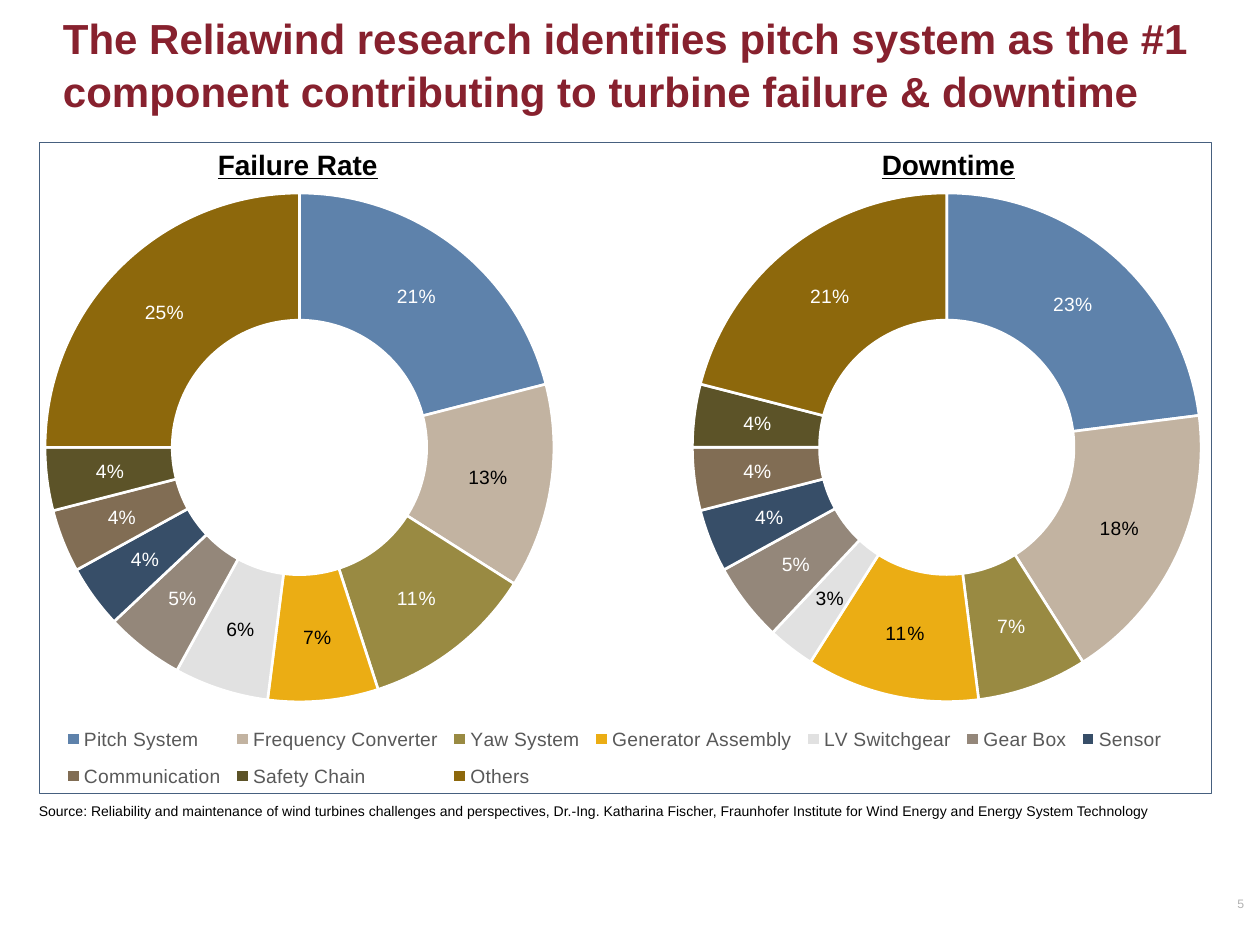
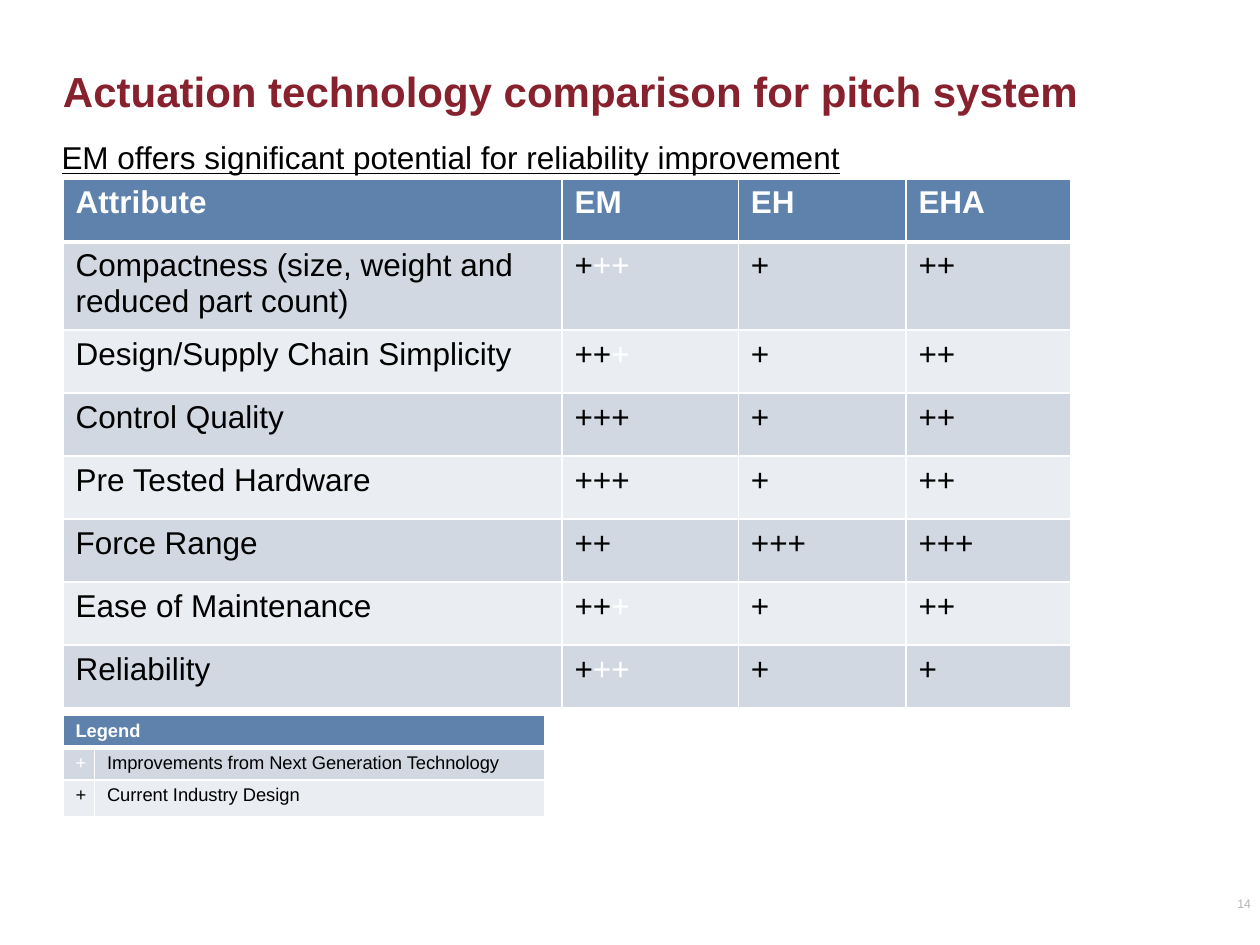
from lxml import etree
from pptx import Presentation
from pptx.chart import data
from pptx.dml.color import RGBColor
from pptx.enum import chart as kinds, shapes, text
from pptx.oxml import ns
from pptx.util import Inches, Pt

HUES = {"title": "87212E", "ink": "000000", "white": "FFFFFF", "page": "B2B2B2",
        "key": "595959", "frame": "46607F", "head": "5E82AB", "odd": "D2D8E2",
        "even": "EAEDF1"}
RGB = {name: RGBColor.from_string(code) for name, code in HUES.items()}
PARTS = {"Pitch System": "5E82AB", "Frequency Converter": "C2B3A1",
         "Yaw System": "998A42", "Generator Assembly": "EBAD14",
         "LV Switchgear": "E1E1E1", "Gear Box": "94877A", "Sensor": "374E68",
         "Communication": "816D54", "Safety Chain": "5C5328", "Others": "8D680C"}
PALE = (1, 3, 4)  # slices light enough to need black labels


def style(font, size, hue, **more):
    values = {"name": "Arial", "size": Pt(size), **more}
    for key, value in values.items():
        setattr(font, key, value)
    font.color.rgb = RGB[hue]


def write(slide, spot, words, size, hue, inset=True, wrap=True, **more):
    """Add a text box with one styled paragraph and return its frame."""
    frame = slide.shapes.add_textbox(*map(Inches, spot)).text_frame
    frame.word_wrap = wrap
    if not inset:
        for side in ("left", "right", "top", "bottom"):
            setattr(frame, f"margin_{side}", 0)
    run = frame.paragraphs[0].add_run()
    run.text = words
    style(run.font, size, hue, **more)
    return frame


deck = Presentation()
deck.slide_width, deck.slide_height = Inches(10), Inches(7.5)

# Titles and page numbers
heads = [
    ("The Reliawind research identifies pitch system as the #1 component "
     "contributing to turbine failure & downtime", (0.5, 0, 9.1, 1), "5"),
    ("Actuation technology comparison for pitch system", (0.5, 0.25, 9, 0.92), "14"),
]
pages = []
for title, spot, number in heads:
    page = deck.slides.add_slide(deck.slide_layouts[6])
    frame = write(page, spot, title, 24, "title", inset=False, bold=True)
    frame.vertical_anchor = text.MSO_ANCHOR.MIDDLE
    frame.paragraphs[0].line_spacing = 1.05
    write(page, (9.82, 7.11, 0.29, 0.12), number, 7, "page", inset=False)
    pages.append(page)
rates, compare = pages

# Slide 1: two rings that share one legend
rings = [
    ((-1.26, 1.45, 11.47, 5.4), (23, 18, 7, 11, 3, 5, 4, 4, 4, 21),
     {"plotArea": (0.589, 0.001, 0.352, 0.776), "legend": (0.15, 0.78, 0.77, 0.13)}),
    ((-0.91, 0.54, 8.45, 5.82), (21, 13, 11, 7, 6, 5, 4, 4, 4, 25),
     {"plotArea": (0.15, 0.112, 0.478, 0.811)}),
]
for spot, shares, areas in rings:
    feed = data.CategoryChartData()
    feed.categories = list(PARTS)
    feed.add_series("Series 1", shares)
    chart = rates.shapes.add_chart(
        kinds.XL_CHART_TYPE.DOUGHNUT, *map(Inches, spot), feed).chart
    style(chart.font, 10, "ink")
    chart.has_title = False
    chart.has_legend = "legend" in areas
    if chart.has_legend:
        chart.legend.position = kinds.XL_LEGEND_POSITION.BOTTOM
        chart.legend.include_in_layout = False
        style(chart.legend.font, 11, "key")

    plot = chart.plots[0]
    plot.vary_by_categories = True
    plot.has_data_labels = False
    ring = plot.series[0]
    labels = ring.data_labels
    labels.show_percentage, labels.show_value = True, False
    style(labels.font, 11, "white")
    for i, code in enumerate(PARTS.values()):
        slice_ = ring.points[i]
        slice_.format.fill.solid()
        slice_.format.fill.fore_color.rgb = RGBColor.from_string(code)
        slice_.format.line.color.rgb = RGB["white"]
        slice_.format.line.width = Pt(1.5)
        if i in PALE:
            style(slice_.data_label.font, 11, "ink")

    root = chart.element
    for tag, value in (("dLbl/c:showVal", 0), ("dLbl/c:showPercent", 1),
                       ("holeSize", 34)):
        for node in root.xpath(f".//c:{tag}"):
            node.set("val", str(value))
    for area, box in areas.items():
        host = root.xpath(f".//c:{area}")[0]
        for old in host.xpath("./c:layout"):
            host.remove(old)
        layout = etree.Element(ns.qn("c:layout"))
        host.insert(1 if area == "legend" else 0, layout)
        manual = etree.SubElement(layout, ns.qn("c:manualLayout"))
        rules = [("xMode", "edge"), ("yMode", "edge"), *zip("xywh", box)]
        if area == "plotArea":
            rules.insert(0, ("layoutTarget", "inner"))
        for tag, value in rules:
            etree.SubElement(manual, ns.qn(f"c:{tag}")).set("val", str(value))

write(rates, (0.21, 6.32, 9.43, 0.24),
      "Source: Reliability and maintenance of wind turbines challenges and "
      "perspectives, Dr.-Ing. Katharina Fischer, Fraunhofer Institute for Wind "
      "Energy and Energy System Technology", 8, "ink")
for left, wide, name in ((1.63, 1.49, "Failure Rate"), (6.9, 1.27, "Downtime")):
    write(rates, (left, 1.12, wide, 0.37), name, 16, "ink", wrap=False,
          bold=True, underline=True)
border = rates.shapes.add_shape(
    shapes.MSO_SHAPE.RECTANGLE, *map(Inches, (0.31, 1.13, 9.3, 5.17)))
border.shadow.inherit = False
border.fill.background()
border.line.color.rgb = RGB["frame"]
border.line.width = Pt(0.25)

# Slide 2: ratings and their key; the signs after "|" are white
ratings = [
    ("Attribute", "EM", "EH", "EHA"),
    ("Compactness (size, weight and reduced part count)", "+|++", "+", "++"),
    ("Design/Supply Chain Simplicity", "++|+", "+", "++"),
    ("Control Quality", "+++", "+", "++"),
    ("Pre Tested Hardware", "+++", "+", "++"),
    ("Force Range", "++", "+++", "+++"),
    ("Ease of Maintenance", "++|+", "+", "++"),
    ("Reliability", "+|++", "+", "+"),
]
key = [
    ("Legend", ""),
    ("|+", "Improvements from Next Generation Technology"),
    ("+", "Current Industry Design"),
]
grids = [
    (ratings, 1.42, (3.96, 1.4, 1.33, 1.31), [0.5] * 8, 18, 0.05),
    (key, 5.68, (0.25, 3.57), [0.25, 0.25, 0.29], 10.5, 0.04),
]
for rows, top, wides, highs, size, pad in grids:
    grid = compare.shapes.add_table(
        len(rows), len(wides), Inches(0.5), Inches(top),
        Inches(sum(wides)), Inches(sum(highs))).table
    for column, wide in zip(grid.columns, wides):
        column.width = Inches(wide)
    for r, row in enumerate(rows):
        grid.rows[r].height = Inches(highs[r])
        for c, words in enumerate(row):
            cell = grid.cell(r, c)
            cell.margin_top = cell.margin_bottom = Inches(pad)
            cell.fill.solid()
            cell.fill.fore_color.rgb = RGB["head" if r == 0 else
                                           "odd" if r % 2 else "even"]
            for part, hue in zip(words.split("|"), ("ink", "white")):
                if part:
                    run = cell.text_frame.paragraphs[0].add_run()
                    run.text = part
                    style(run.font, size, hue if r else "white", bold=r == 0)
            props = cell._tc.get_or_add_tcPr()
            for n, side in enumerate("LRTB"):
                thick = (r, side) in ((0, "B"), (1, "T"))
                line = etree.Element(ns.qn(f"a:ln{side}"), w=str(Pt(3 if thick else 1)))
                fill = etree.SubElement(line, ns.qn("a:solidFill"))
                etree.SubElement(fill, ns.qn("a:srgbClr"), val=HUES["white"])
                props.insert(n, line)
    if rows is key:
        grid.cell(0, 0).merge(grid.cell(0, 1))

write(compare, (0.39, 1.05, 8.6, 0.4),
      "EM offers significant potential for reliability improvement", 18, "ink",
      underline=True)

deck.save("out.pptx")
